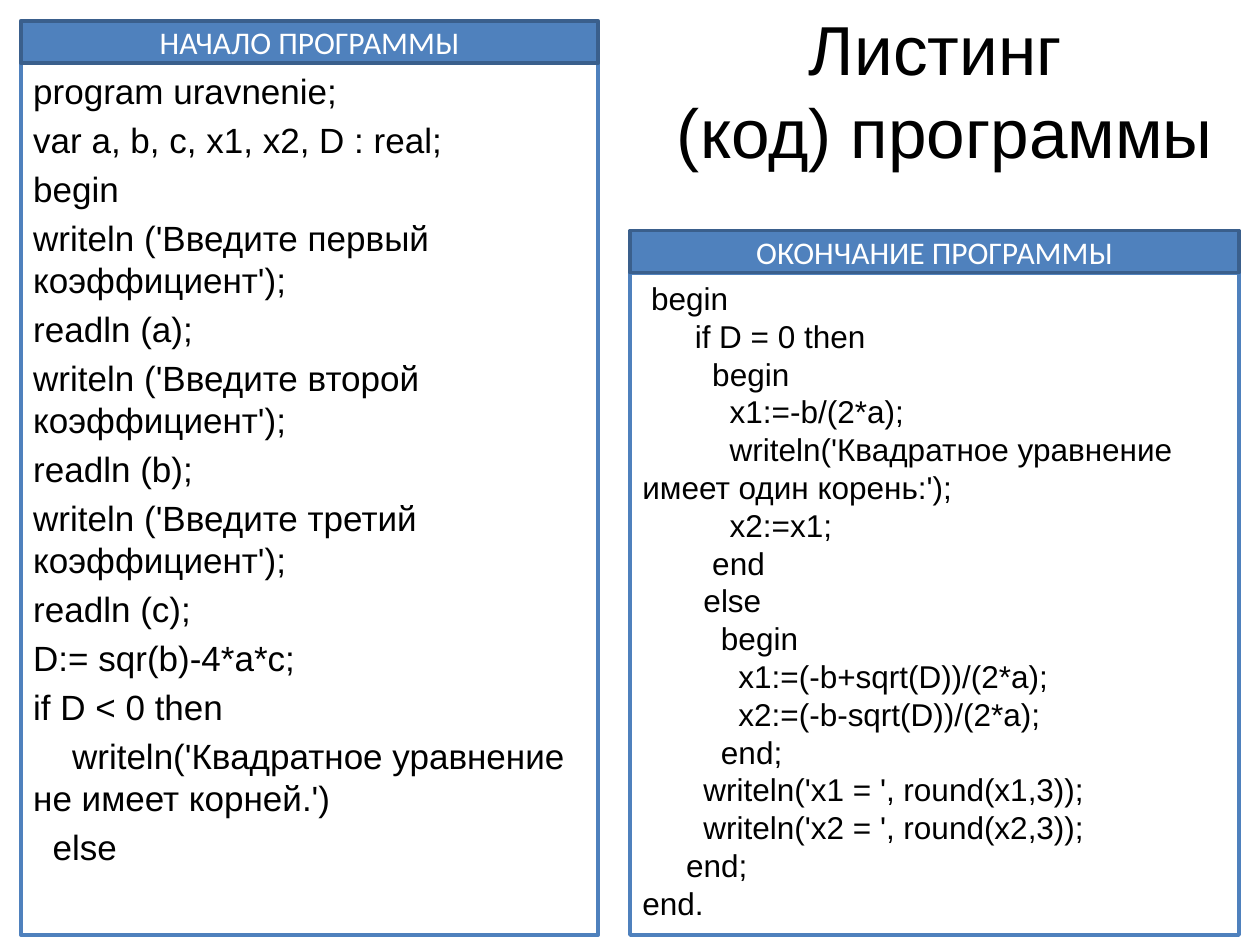
from pptx import Presentation
from pptx.dml.color import RGBColor
from pptx.enum.shapes import MSO_SHAPE
from pptx.enum.text import MSO_ANCHOR, PP_ALIGN
from pptx.util import Cm, Pt

RECT = MSO_SHAPE.RECTANGLE
TOP, MIDDLE = MSO_ANCHOR.TOP, MSO_ANCHOR.MIDDLE
LEFT, CENTER = PP_ALIGN.LEFT, PP_ALIGN.CENTER
BLACK = RGBColor(0x00, 0x00, 0x00)
WHITE = RGBColor(0xFF, 0xFF, 0xFF)
BLUE = RGBColor(0x4F, 0x81, 0xBD)
NAVY = RGBColor(0x3A, 0x5F, 0x8C)

START = """program uravnenie;
var a, b, c, x1, x2, D : real;
begin
writeln ('Введите первый коэффициент');
readln (a);
writeln ('Введите второй коэффициент');
readln (b);
writeln ('Введите третий коэффициент');
readln (c);
D:= sqr(b)-4*a*c;
if D < 0 then
    writeln('Квадратное уравнение не имеет корней.')
  else"""

FINISH = """ begin
      if D = 0 then
        begin
          x1:=-b/(2*a);
          writeln('Квадратное уравнение имеет один корень:');
          x2:=x1;
        end
       else
         begin
           x1:=(-b+sqrt(D))/(2*a);
           x2:=(-b-sqrt(D))/(2*a);
         end;
       writeln('x1 = ', round(x1,3));
       writeln('x2 = ', round(x2,3));
     end;
end."""


def style(frame, text, align, gap, look):
    frame.word_wrap = True
    frame.text = text
    for num, par in enumerate(frame.paragraphs):
        par.alignment = align
        par.space_before = Pt(gap if num else 0)
        for run in par.runs:
            run.font.color.rgb = look["color"]
            for key in ("name", "size"):
                setattr(run.font, key, look[key])


def panel(box, fill, edge, anchor):
    shape = slide.shapes.add_shape(RECT, *(Cm(side) for side in box))
    shape.shadow.inherit = False
    shape.fill.solid()
    shape.fill.fore_color.rgb = fill
    shape.line.color.rgb = edge
    shape.line.width = Pt(2)
    shape.text_frame.vertical_anchor = anchor
    return shape.text_frame


deck = Presentation()
deck.slide_width, deck.slide_height = Cm(25.4), Cm(19.05)
slide = deck.slides.add_slide(deck.slide_layouts[5])

# Title
title = slide.shapes.title
place = {"left": Cm(12.7), "top": Cm(0), "width": Cm(12.7), "height": Cm(3.6)}
for key, value in place.items():
    setattr(title, key, value)
title.text_frame.vertical_anchor = MIDDLE
style(title.text_frame, "Листинг \v(код) программы", CENTER, 0,
      {"name": "Arial", "size": Pt(39.6), "color": BLACK})

# Columns: left, top, width, heading, code, text size, paragraph gap
COLUMNS = [
    (0.42, 0.42, 11.64, "НАЧАЛО ПРОГРАММЫ", START, 20, 4),
    (12.7, 4.65, 12.28, "ОКОНЧАНИЕ ПРОГРАММЫ", FINISH, 18, 0),
]
HEAD = 0.85
BOTTOM = 18.85

for left, top, width, name, code, size, gap in COLUMNS:
    # Code panel
    start = top + HEAD
    frame = panel((left, start, width, BOTTOM - start), WHITE, BLUE, TOP)
    style(frame, code, LEFT, gap,
          {"name": "Arial", "size": Pt(size), "color": BLACK})

    # Heading bar
    frame = panel((left, top, width, HEAD), BLUE, NAVY, MIDDLE)
    style(frame, name, CENTER, 0,
          {"name": "Calibri", "size": Pt(18), "color": WHITE})

deck.save("out.pptx")
